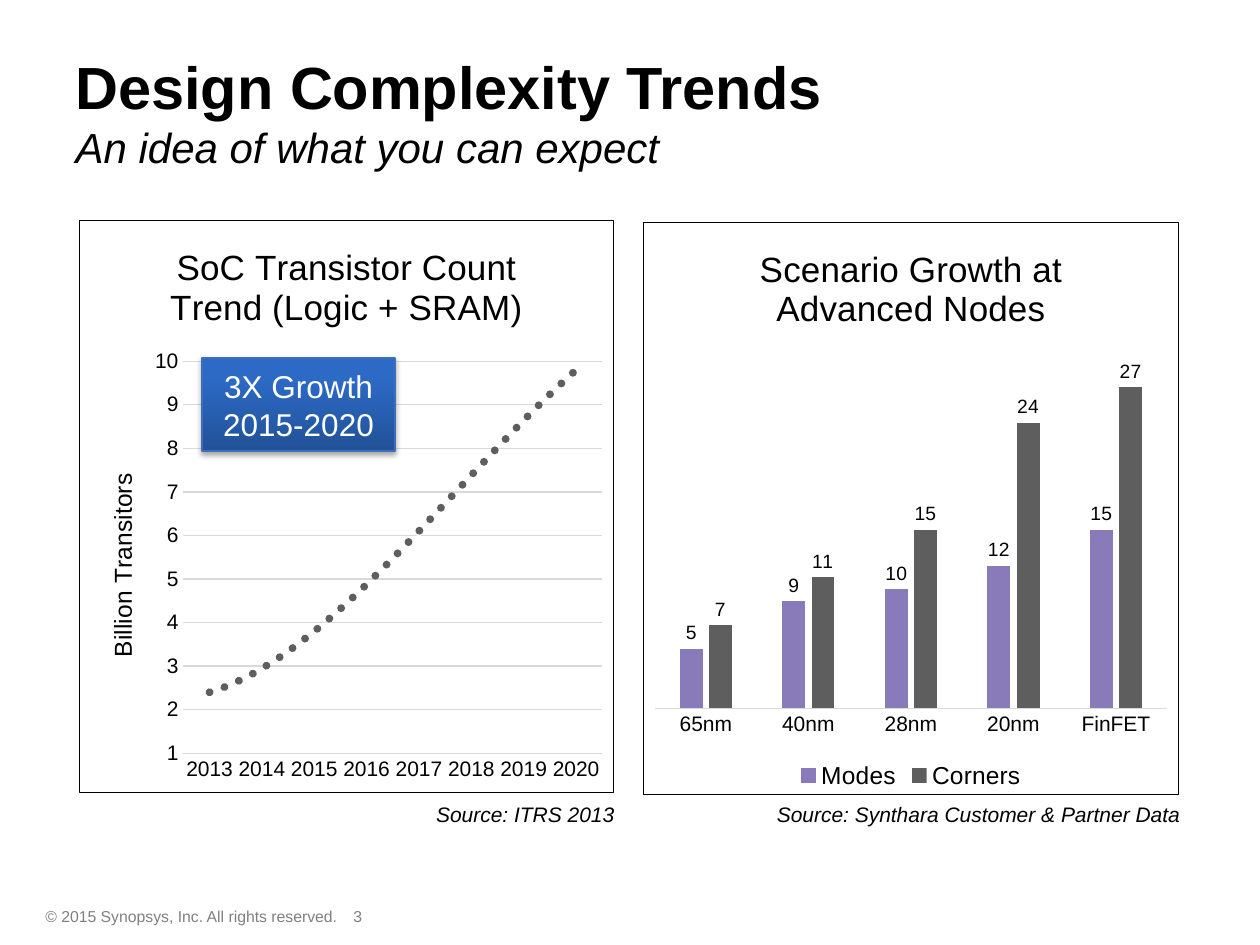
from dataclasses import dataclass

from lxml import etree
from pptx import Presentation
from pptx.chart.data import CategoryChartData
from pptx.dml.color import RGBColor
from pptx.enum.chart import XL_CHART_TYPE, XL_LABEL_POSITION, XL_LEGEND_POSITION, XL_MARKER_STYLE, XL_TICK_MARK
from pptx.enum.shapes import MSO_SHAPE
from pptx.enum.text import MSO_ANCHOR, MSO_AUTO_SIZE, PP_ALIGN
from pptx.oxml import parse_xml
from pptx.oxml.ns import qn
from pptx.util import Pt

LINE, COLUMN = XL_CHART_TYPE.LINE_MARKERS, XL_CHART_TYPE.COLUMN_CLUSTERED
CIRCLE = XL_MARKER_STYLE.CIRCLE
NO_TICK = XL_TICK_MARK.NONE
OUTSIDE_END = XL_LABEL_POSITION.OUTSIDE_END
LEGEND_BOTTOM = XL_LEGEND_POSITION.BOTTOM
RECT = MSO_SHAPE.RECTANGLE
MIDDLE = MSO_ANCHOR.MIDDLE
NO_FIT = MSO_AUTO_SIZE.NONE
LEFT, CENTER, RIGHT = PP_ALIGN.LEFT, PP_ALIGN.CENTER, PP_ALIGN.RIGHT

SCALE = 914400 / 126
NS = ('xmlns:c="http://schemas.openxmlformats.org/drawingml/2006/chart" '
      'xmlns:a="http://schemas.openxmlformats.org/drawingml/2006/main"')


@dataclass(frozen=True)
class Theme:
    font: str = "Arial"
    text: str = "000000"
    white: str = "FFFFFF"
    footer: str = "808080"
    grid: str = "D9D9D9"
    purple: str = "897ABA"
    gray: str = "5E5E5E"
    blue_dark: str = "225298"
    blue: str = "2C6AC6"
    blue_line: str = "3C6EB9"
    title_size: int = 34
    subtitle_size: int = 24
    chart_title_size: int = 20
    callout_size: int = 18
    legend_size: int = 14
    body_size: int = 12
    label_size: int = 11
    footer_size: int = 9


class Deck:
    """Builds styled elements on the current slide."""

    def __init__(self, theme, width, height):
        self.theme = theme
        self.prs = Presentation()
        self.prs.slide_width, self.prs.slide_height = self.emu(width, height)
        self.s = self.prs.slides.add_slide(self.prs.slide_layouts[5])

    def emu(self, *lengths):
        return [round(n * SCALE) for n in lengths]

    def style(self, font, size, color=None, bold=False, italic=False):
        font.name, font.size = self.theme.font, Pt(size)
        font.bold, font.italic = bold, italic
        font.color.rgb = RGBColor.from_string(color or self.theme.text)

    def title(self, box, heading, subtitle):
        sp = self.s.shapes.title
        sp.left, sp.top, sp.width, sp.height = self.emu(*box)
        tf = sp.text_frame
        tf.text = f"{heading}\v{subtitle}"
        tf.auto_size, tf.vertical_anchor = NO_FIT, MIDDLE
        p = tf.paragraphs[0]
        p.alignment = LEFT
        self.style(p.runs[0].font, self.theme.title_size, bold=True)
        self.style(p.runs[1].font, self.theme.subtitle_size, italic=True)

    def text(self, box, text, size, color=None, italic=False, align=LEFT):
        tf = self.s.shapes.add_textbox(*self.emu(*box)).text_frame
        tf.word_wrap = True
        tf.text = text
        p = tf.paragraphs[0]
        p.alignment = align
        self.style(p.runs[0].font, size, color, italic=italic)

    def callout(self, box, text):
        sp = self.s.shapes.add_shape(RECT, *self.emu(*box))
        sp.fill.gradient()
        sp.fill.gradient_angle = 90
        stops = zip(sp.fill.gradient_stops, (self.theme.blue_dark, self.theme.blue), (0, 0.8))
        for stop, color, position in stops:
            stop.color.rgb = RGBColor.from_string(color)
            stop.position = position
        sp.line.color.rgb = RGBColor.from_string(self.theme.blue_line)
        sp.line.width = Pt(0.75)
        sp.shadow.inherit = False
        effects = sp.element.spPr.find(qn("a:effectLst"))
        effects.append(parse_xml(
            f'<a:outerShdw {NS} blurRad="40000" dist="23000" dir="5400000" rotWithShape="0">'
            '<a:srgbClr val="000000"><a:alpha val="35000"/></a:srgbClr></a:outerShdw>'))
        tf = sp.text_frame
        tf.text = text
        tf.vertical_anchor = MIDDLE
        for p in tf.paragraphs:
            p.alignment = CENTER
            self.style(p.runs[0].font, self.theme.callout_size, self.theme.white)

    def chart(self, kind, box, plot_box, title, cats, series, low, high):
        data = CategoryChartData()
        data.categories = cats
        for name, values in series:
            data.add_series(name, values)
        chart = self.s.shapes.add_chart(kind, *self.emu(*box), data).chart
        self.style(chart.font, self.theme.body_size)
        chart.has_legend = False
        tf = chart.chart_title.text_frame
        tf.text = title
        self.style(tf.paragraphs[0].runs[0].font, self.theme.chart_title_size)
        chart.chart_title.include_in_layout = False
        chart.plots[0].vary_by_categories = False
        axis = chart.category_axis
        axis.major_tick_mark = axis.minor_tick_mark = NO_TICK
        self.style(axis.tick_labels.font, self.theme.body_size)
        axis.format.line.color.rgb = RGBColor.from_string(self.theme.grid)
        axis.format.line.width = Pt(0.75)
        axis = chart.value_axis
        axis.minimum_scale, axis.maximum_scale = low, high
        axis.has_major_gridlines = False
        self.frame(chart, box, plot_box)
        return chart

    def frame(self, chart, box, plot_box):
        root = chart.element
        if root.find(qn("c:roundedCorners")) is None:
            root.find(qn("c:date1904")).addnext(parse_xml(f'<c:roundedCorners {NS} val="0"/>'))
        root.find(qn("c:chart")).addnext(parse_xml(
            f'<c:spPr {NS}><a:noFill/><a:ln w="9525"><a:solidFill>'
            f'<a:srgbClr val="{self.theme.text}"/></a:solidFill></a:ln></c:spPr>'))
        left, top, width, height = box
        x, y, w, h = plot_box
        parts = {"x": (x - left) / width, "y": (y - top) / height, "w": w / width, "h": h / height}
        area = root.find(".//" + qn("c:plotArea"))
        old = area.find(qn("c:layout"))
        if old is not None:
            area.remove(old)
        layout = parse_xml(
            f'<c:layout {NS}><c:manualLayout><c:layoutTarget val="inner"/>'
            '<c:xMode val="edge"/><c:yMode val="edge"/></c:manualLayout></c:layout>')
        for tag, value in parts.items():
            etree.SubElement(layout[0], qn(f"c:{tag}")).set("val", f"{value:.4f}")
        area.insert(0, layout)

    def trend_chart(self, axis_title, **content):
        chart = self.chart(LINE, **content)
        axis = chart.value_axis
        axis.major_unit = 1
        axis.major_tick_mark = axis.minor_tick_mark = NO_TICK
        axis.has_major_gridlines = True
        grid = axis.major_gridlines.format.line
        grid.color.rgb, grid.width = RGBColor.from_string(self.theme.grid), Pt(0.75)
        axis.format.line.fill.background()
        axis.tick_labels.number_format = "0"
        axis.tick_labels.number_format_is_linked = False
        self.style(axis.tick_labels.font, self.theme.body_size)
        tf = axis.axis_title.text_frame
        tf.text = axis_title
        self.style(tf.paragraphs[0].runs[0].font, self.theme.legend_size)
        ser = chart.series[0]
        ser.smooth = False
        ser.format.line.fill.background()
        ser.marker.style, ser.marker.size = CIRCLE, 5
        ser.marker.format.fill.background()
        ser.marker.format.line.fill.background()
        ser.format.line.width = Pt(2.25)
        ser._element.find(qn("c:cat")).addprevious(parse_xml(
            f'<c:trendline {NS}><c:spPr><a:ln w="57150" cap="rnd"><a:solidFill>'
            f'<a:srgbClr val="{self.theme.gray}"/></a:solidFill><a:prstDash val="sysDot"/></a:ln></c:spPr>'
            '<c:trendlineType val="poly"/><c:order val="3"/>'
            '<c:dispRSqr val="0"/><c:dispEq val="0"/></c:trendline>'))

    def column_chart(self, colors, **content):
        chart = self.chart(COLUMN, **content)
        chart.value_axis.visible = False
        plot = chart.plots[0]
        plot.gap_width, plot.overlap = 219, -27
        for ser, color in zip(plot.series, colors):
            ser.format.fill.solid()
            ser.format.fill.fore_color.rgb = RGBColor.from_string(color)
            labels = ser.data_labels
            labels.show_value, labels.position = True, OUTSIDE_END
            self.style(labels.font, self.theme.label_size)
        chart.has_legend = True
        chart.legend.position, chart.legend.include_in_layout = LEGEND_BOTTOM, False
        self.style(chart.legend.font, self.theme.legend_size)


def main():
    t = Theme()
    deck = Deck(t, 1260, 945)
    deck.title((63, 32, 1197, 157), "Design Complexity Trends", "An idea of what you can expect")
    deck.text((33, 901, 388, 32), "© 2015 Synopsys, Inc. All rights reserved.", t.footer_size, t.footer)
    deck.text((341, 901, 88, 32), "3", t.footer_size, t.footer)
    deck.trend_chart(
        "Billion Transitors", box=(79, 220, 535, 573), plot_box=(183, 361, 420, 393),
        title="SoC Transistor Count Trend (Logic + SRAM)",
        cats=[str(year) for year in range(2013, 2021)],
        series=[("Series 1", (2.4, None, 3.8, None, 6.1, None, None, 9.8))], low=1, high=10)
    deck.callout((202, 358, 193, 93), "3X Growth\n2015-2020")
    deck.column_chart(
        (t.purple, t.gray), box=(643, 222, 536, 573), plot_box=(654, 351, 514, 358),
        title="Scenario Growth at Advanced Nodes",
        cats=["65nm", "40nm", "28nm", "20nm", "FinFET"],
        series=[("Modes", (5, 9, 10, 12, 15)), ("Corners", (7, 11, 15, 24, 27))], low=0, high=30)
    sources = ("Source: ITRS 2013", 627), ("Source: Synthara Customer & Partner Data", 1193)
    for source, right in sources:
        deck.text((right - 450, 795, 450, 38), source, t.body_size, italic=True, align=RIGHT)
    deck.prs.save("out.pptx")


if __name__ == "__main__":
    main()
